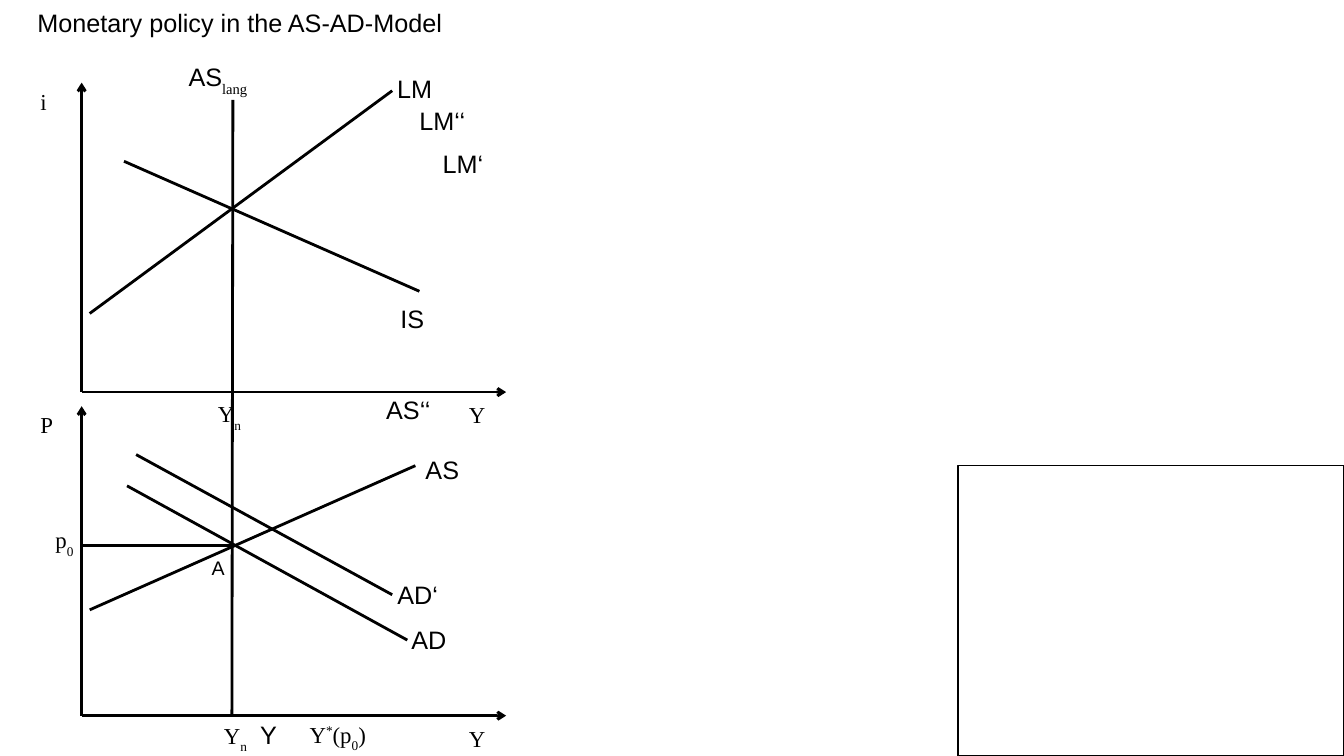
import pptx
import pptx.util
import pptx.dml.color
import pptx.enum.shapes
import pptx.enum.text
import pptx.oxml
import pptx.oxml.ns
from dataclasses import dataclass


@dataclass(frozen=True)
class Theme:
    """Colours, fonts and type sizes, and the rows that divide the slide's height."""
    ink: object = pptx.dml.color.RGBColor(0, 0, 0)
    paper: object = pptx.dml.color.RGBColor(255, 255, 255)
    serif: str = "Times New Roman"
    sans: str = "Arial"
    axis: float = 16.3
    curve: float = 18
    point: float = 14
    rows: int = 75


THEME = Theme()
AXIS = (THEME.serif, THEME.axis, 3.5)
CURVE = (THEME.sans, THEME.curve, 3.8)
POINT = (THEME.sans, THEME.point, 3.2)
HIGH = pptx.util.Inches(7.5)
WIDE = pptx.util.Inches(13.33)
COLS = THEME.rows * WIDE / HIGH
PLOT = (42.1, 30.7)


def grid(count):
    """Turn a count of square grid cells into a length."""
    return pptx.util.Emu(round(count * HIGH / THEME.rows))


def draw_line(slide, box, start, end, arrow=False):
    """Draw a hairline between two points counted from the box corner."""
    left, top = box
    line = slide.shapes.add_connector(
        pptx.enum.shapes.MSO_CONNECTOR.STRAIGHT,
        grid(left + start[0]), grid(top + start[1]),
        grid(left + end[0]), grid(top + end[1]))
    line.line.color.rgb = THEME.ink
    line.line.width = pptx.util.Pt(0)
    if arrow:
        tail = pptx.oxml.parse_xml(
            '<a:tailEnd %s type="arrow"/>' % pptx.oxml.ns.nsdecls("a"))
        line.line._get_or_add_ln().append(tail)
    props = line._element.spPr
    props.append(pptx.oxml.parse_xml(
        "<a:effectLst %s/>" % pptx.oxml.ns.nsdecls("a")))


def add_label(slide, box, place, width, style, *runs):
    """Write a label; a run is text or a pair of text and baseline shift."""
    font, size, height = style
    label = slide.shapes.add_textbox(
        grid(box[0] + place[0]), grid(box[1] + place[1]), grid(width), grid(height))
    frame = label.text_frame
    frame.word_wrap = False
    frame.auto_size = pptx.enum.text.MSO_AUTO_SIZE.SHAPE_TO_FIT_TEXT
    frame.margin_left = frame.margin_right = grid(0.9)
    frame.margin_top = frame.margin_bottom = grid(0.45)
    for item in runs:
        text, shift = (item, 0) if isinstance(item, str) else item
        run = frame.paragraphs[0].add_run()
        run.text = text
        run.font.name = THEME.serif if shift else font
        run.font.size = pptx.util.Pt(size)
        run.font.color.rgb = THEME.ink
        if shift:
            run._r.get_or_add_rPr().set("baseline", str(shift * 1000))


def draw_plot(slide, box, name, width, lines, labels):
    """Draw the axes, then the given lines and labels, from the box corner."""
    right, base = PLOT
    draw_line(slide, box, (0, base), (0, 0), True)
    draw_line(slide, box, (0, base), (right, base), True)
    add_label(slide, box, (-5, 0), width, AXIS, name)
    add_label(slide, box, (37.5, 31.1), 3.5, AXIS, "Y")
    for start, end in lines:
        draw_line(slide, box, start, end)
    for place, width, style, *runs in labels:
        add_label(slide, box, place, width, style, *runs)


def draw_money(slide, box):
    """Draw the IS-LM plot, with the long-run supply line down both plots."""
    lines = [
        ((4.2, 7.8), (33.5, 20.7)),
        ((0.8, 22.9), (30.8, 0.8)),
        ((15, 1.7), (14.9, 62.8)),
    ]
    labels = [
        ((30.4, -1.4), 5.3, CURVE, "LM"),
        ((32.6, 1.8), 6.4, CURVE, "LM‘‘"),
        ((34.9, 6.1), 5.9, CURVE, "LM‘"),
        ((30.7, 21.4), 4.2, CURVE, "IS"),
        ((9.7, -2.6), 8.1, CURVE, "AS", ("lang", -33)),
        ((12.6, 31), 4.2, AXIS, "Y", ("n", -33)),
    ]
    draw_plot(slide, box, "i", 2.4, lines, labels)


def draw_price(slide, box):
    """Draw the AS-AD plot."""
    lines = [
        ((4.5, 7.9), (32.3, 23.2)),
        ((5.4, 4.8), (30.8, 18.7)),
        ((0.8, 20.2), (33.1, 5.9)),
        ((14.9, 13.8), (0, 13.8)),
    ]
    labels = [
        ((29.3, -1.6), 6.2, CURVE, "AS‘‘"),
        ((33.2, 4.3), 5.2, CURVE, "AS"),
        ((30.4, 16.7), 5.9, CURVE, "AD‘"),
        ((31.8, 21.2), 5.3, CURVE, "AD"),
        ((12, 14.4), 3.1, POINT, "A"),
        ((-3.5, 11.4), 3.7, AXIS, "p", ("0", -33)),
        ((13.2, 30.8), 4.2, AXIS, "Y", ("n", -33)),
        ((16.8, 30.6), 4, CURVE, "Y‘"),
        ((21.7, 30.7), 7.7, AXIS, "Y", ("*", 33), "(p", ("0", -33), ")"),
    ]
    draw_plot(slide, box, "P", 3.1, lines, labels)


def draw_frame(slide, width, height):
    """Draw the empty frame in the slide's lower right corner."""
    frame = slide.shapes.add_shape(
        pptx.enum.shapes.MSO_SHAPE.RECTANGLE, grid(COLS - width),
        grid(THEME.rows - height), grid(width), grid(height))
    frame.shadow.inherit = False
    frame.fill.background()
    frame.line.color.rgb = THEME.ink
    frame.line.width = pptx.util.Pt(1)


def main():
    """Build and save the slide."""
    deck = pptx.Presentation()
    deck.slide_width, deck.slide_height = WIDE, HIGH
    slide = deck.slides.add_slide(deck.slide_layouts[6])
    slide.background.fill.solid()
    slide.background.fill.fore_color.rgb = THEME.paper
    add_label(slide, (0, 0), (2.8, 0.3), 42.9, CURVE,
              "Monetary policy in the AS-AD-Model")
    draw_money(slide, (8.1, 8.2))
    draw_price(slide, (8.1, 40.3))
    draw_frame(slide, 38.3, 28.8)
    deck.save("out.pptx")


if __name__ == "__main__":
    main()
